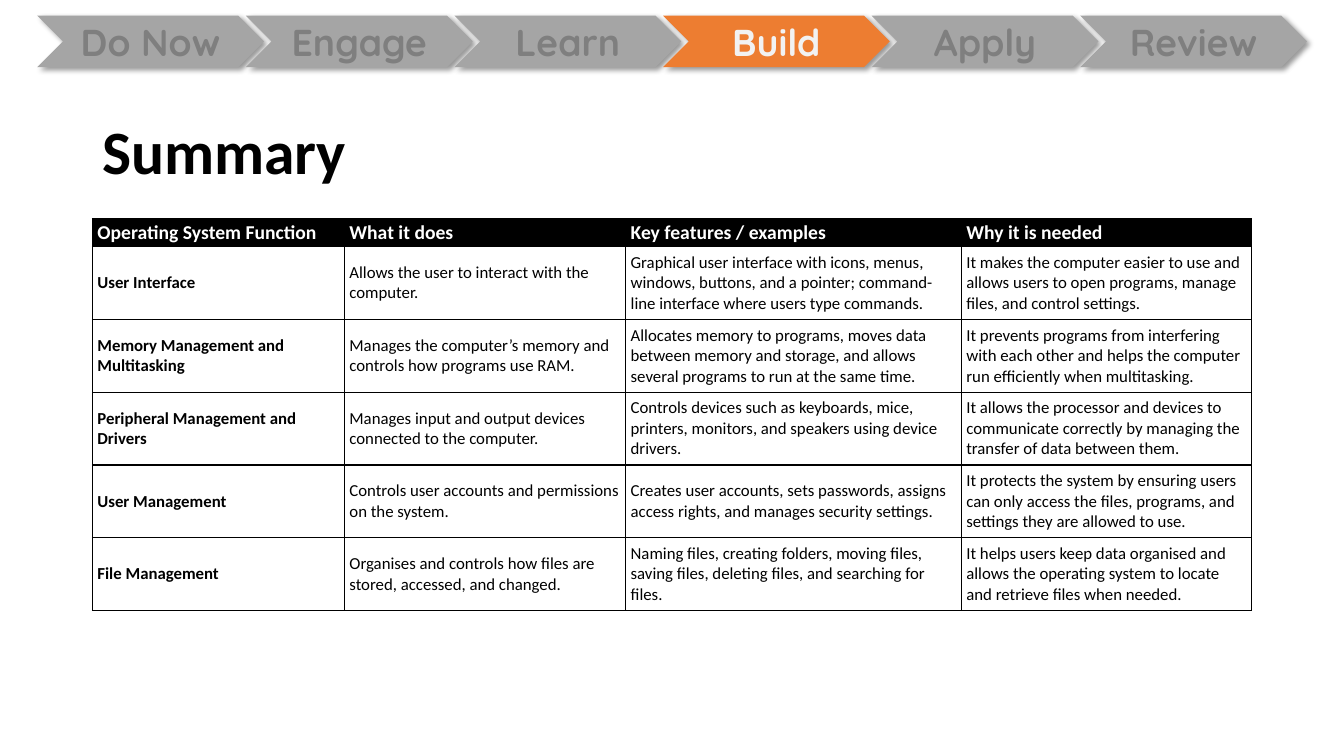
from dataclasses import dataclass

from lxml import etree
from pptx import Presentation
from pptx.dml.color import RGBColor
from pptx.enum import shapes, text
from pptx.oxml import ns
from pptx.util import Pt

COLORS = {
    "black": "000000",
    "white": "FFFFFF",
    "grey": "A5A5A5",
    "dim": "7F7F7F",
    "orange": "ED7D31",
    "pale": "F2F2F2",
}
STAGES = ["Do Now", "Engage", "Learn", "Build", "Apply", "Review"]
ACTIVE = "Build"
WIDTHS = [180, 200.9, 239.8, 207.3]
HEAD_ROW, BODY_ROW = 15, 52


@dataclass
class Style:
    size: float
    color: str
    bold: bool = True
    font: str = "Calibri"


@dataclass
class Job:
    name: str
    does: str
    features: str
    need: str

    def row(self) -> list[str]:
        return [self.name, self.does, self.features, self.need]


HEADS = Job("Operating System Function", "What it does",
            "Key features / examples", "Why it is needed")
JOBS = [
    Job("User Interface",
        "Allows the user to interact with the computer.",
        "Graphical user interface with icons, menus, windows, buttons, and a "
        "pointer; command-line interface where users type commands.",
        "It makes the computer easier to use and allows users to open "
        "programs, manage files, and control settings."),
    Job("Memory Management and Multitasking",
        "Manages the computer’s memory and controls how programs use RAM.",
        "Allocates memory to programs, moves data between memory and storage, "
        "and allows several programs to run at the same time.",
        "It prevents programs from interfering with each other and helps the "
        "computer run efficiently when multitasking."),
    Job("Peripheral Management and Drivers",
        "Manages input and output devices connected to the computer.",
        "Controls devices such as keyboards, mice, printers, monitors, and "
        "speakers using device drivers.",
        "It allows the processor and devices to communicate correctly by "
        "managing the transfer of data between them."),
    Job("User Management",
        "Controls user accounts and permissions on the system.",
        "Creates user accounts, sets passwords, assigns access rights, and "
        "manages security settings.",
        "It protects the system by ensuring users can only access the files, "
        "programs, and settings they are allowed to use."),
    Job("File Management",
        "Organises and controls how files are stored, accessed, and changed.",
        "Naming files, creating folders, moving files, saving files, deleting "
        "files, and searching for files.",
        "It helps users keep data organised and allows the operating system "
        "to locate and retrieve files when needed."),
]


def rgb(name: str) -> RGBColor:
    return RGBColor.from_string(COLORS[name])


def write(frame, words: str, style: Style) -> None:
    frame.text = words
    for run in frame.paragraphs[0].runs:
        run.font.name = style.font
        run.font.size = Pt(style.size)
        run.font.bold = style.bold
        run.font.color.rgb = rgb(style.color)


def add_ink(parent, color: str):
    fill = etree.SubElement(parent, ns.qn("a:solidFill"))
    return etree.SubElement(fill, ns.qn("a:srgbClr"), val=COLORS[color])


def add_shade(shape) -> None:
    """Give the shape a soft shadow to its lower right."""
    shape.shadow.inherit = False
    effects = shape._element.spPr.find(ns.qn("a:effectLst"))
    outer = etree.SubElement(
        effects, ns.qn("a:outerShdw"), blurRad=str(Pt(4)), dist=str(Pt(3)),
        dir=str(45 * 60000), algn="tl", rotWithShape="0")
    ink = etree.SubElement(outer, ns.qn("a:srgbClr"), val=COLORS["black"])
    etree.SubElement(ink, ns.qn("a:alpha"), val="40000")


def add_stage(slide, index: int, name: str) -> None:
    live = name == ACTIVE
    arrow = slide.shapes.add_shape(
        shapes.MSO_SHAPE.CHEVRON,
        Pt(26.6 + 149 * index), Pt(11.2), Pt(162), Pt(36.8))
    arrow.fill.solid()
    arrow.fill.fore_color.rgb = rgb("orange" if live else "grey")
    arrow.line.fill.background()
    add_shade(arrow)
    frame = arrow.text_frame
    frame.word_wrap = False
    write(frame, name, Style(26.7, "pale" if live else "dim", font="Quicksand"))
    frame.paragraphs[0].alignment = text.PP_ALIGN.CENTER


def add_title(slide, words: str) -> None:
    frame = slide.shapes.add_textbox(
        Pt(66), Pt(58.3), Pt(828), Pt(104.4)).text_frame
    frame.word_wrap = True
    frame.vertical_anchor = text.MSO_ANCHOR.MIDDLE
    write(frame, words, Style(44, "black"))
    frame.paragraphs[0].line_spacing = 0.9


def add_edges(cell) -> None:
    props = cell._tc.get_or_add_tcPr()
    for side in "LRTB":
        line = etree.SubElement(props, ns.qn(f"a:ln{side}"), w=str(Pt(1)))
        add_ink(line, "black")


def fill_cell(cell, words: str, style: Style, head: bool) -> None:
    cell.vertical_anchor = text.MSO_ANCHOR.MIDDLE
    cell.margin_left = cell.margin_right = Pt(3.6)
    cell.margin_top = cell.margin_bottom = Pt(1.5)
    add_edges(cell)
    if head:
        cell.fill.solid()
        cell.fill.fore_color.rgb = rgb("black")
    else:
        cell.fill.background()
    write(cell.text_frame, words, style)


def add_grid(slide) -> None:
    rows = [HEADS, *JOBS]
    table = slide.shapes.add_table(
        len(rows), len(WIDTHS), Pt(66), Pt(156.4), Pt(sum(WIDTHS)),
        Pt(HEAD_ROW + BODY_ROW * len(JOBS))).table
    table.first_row = table.horz_banding = False
    for col, width in zip(table.columns, WIDTHS):
        col.width = Pt(width)
    for r, job in enumerate(rows):
        head = r == 0
        table.rows[r].height = Pt(HEAD_ROW if head else BODY_ROW)
        for c, words in enumerate(job.row()):
            style = Style(14, "white") if head else Style(12, "black", c == 0)
            fill_cell(table.cell(r, c), words, style, head)


def main() -> None:
    deck = Presentation()
    deck.slide_width, deck.slide_height = Pt(960), Pt(540)
    slide = deck.slides.add_slide(deck.slide_layouts[6])
    for index, name in enumerate(STAGES):
        add_stage(slide, index, name)
    add_title(slide, "Summary")
    add_grid(slide)
    deck.save("out.pptx")


if __name__ == "__main__":
    main()
